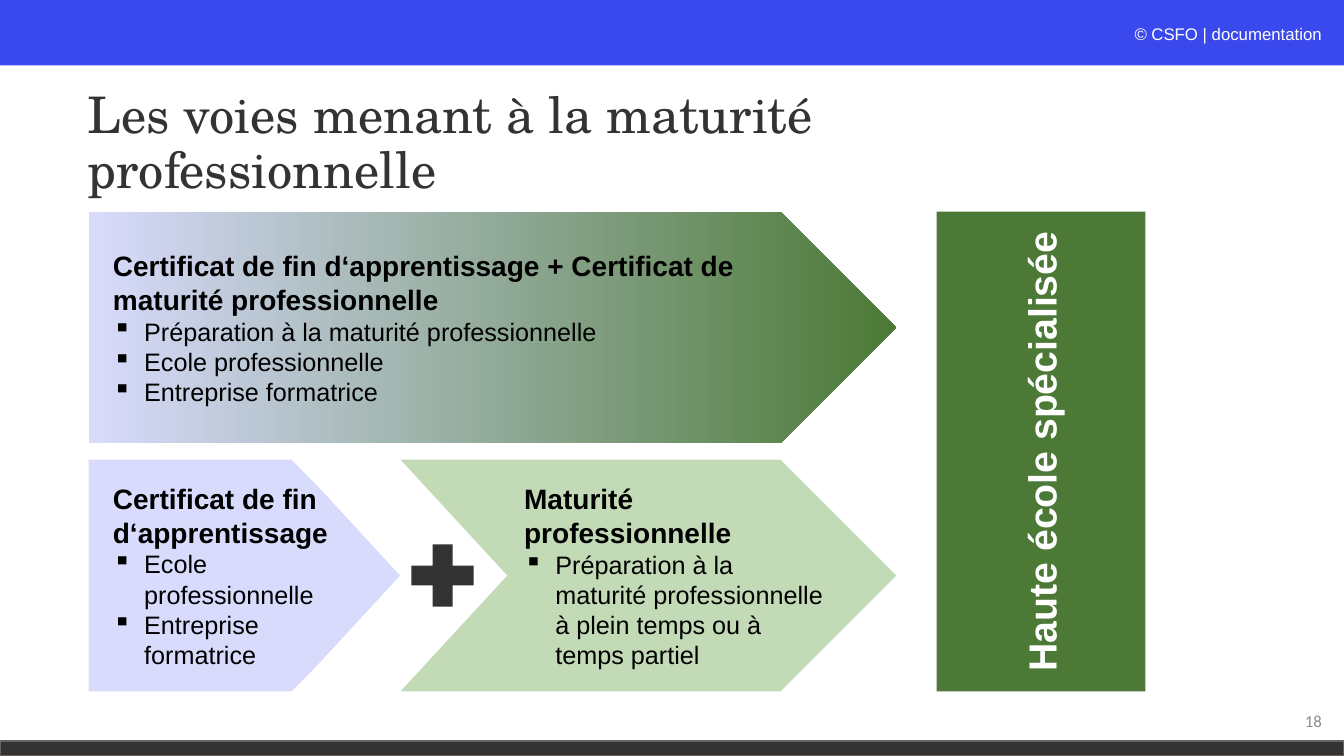
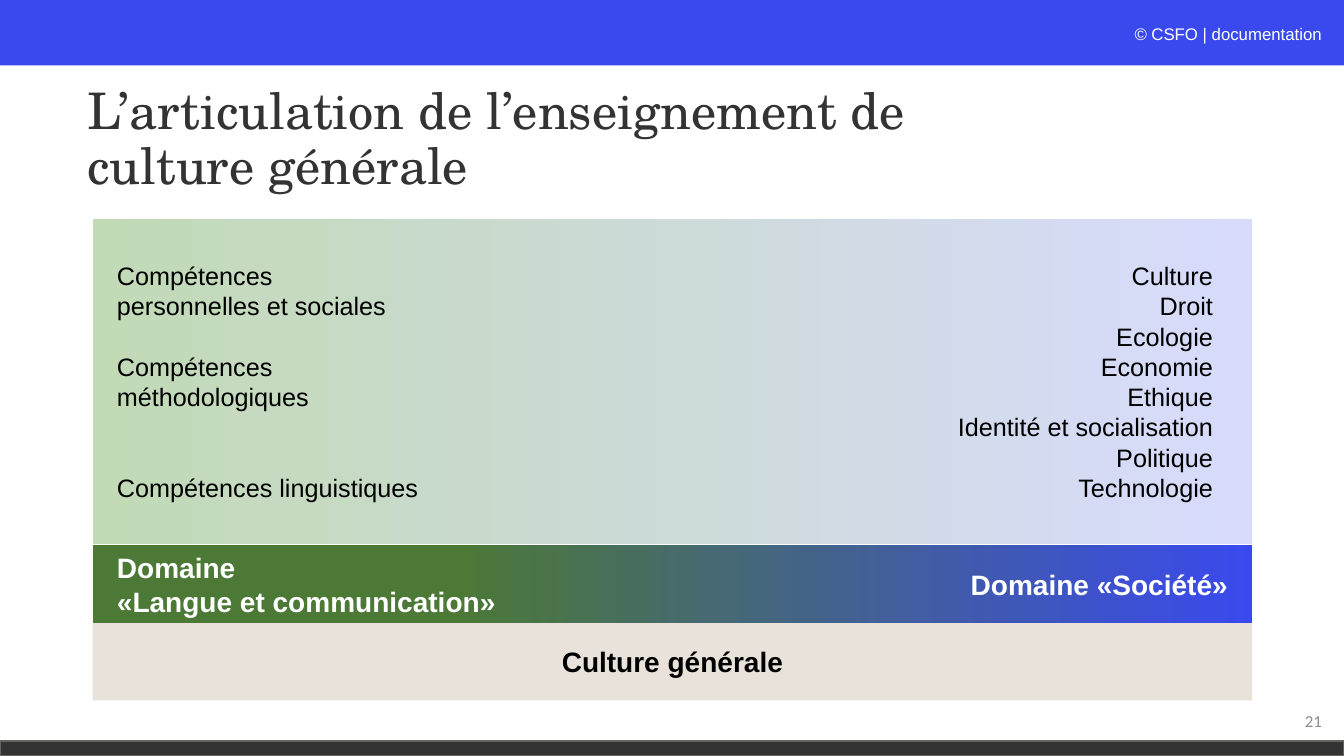
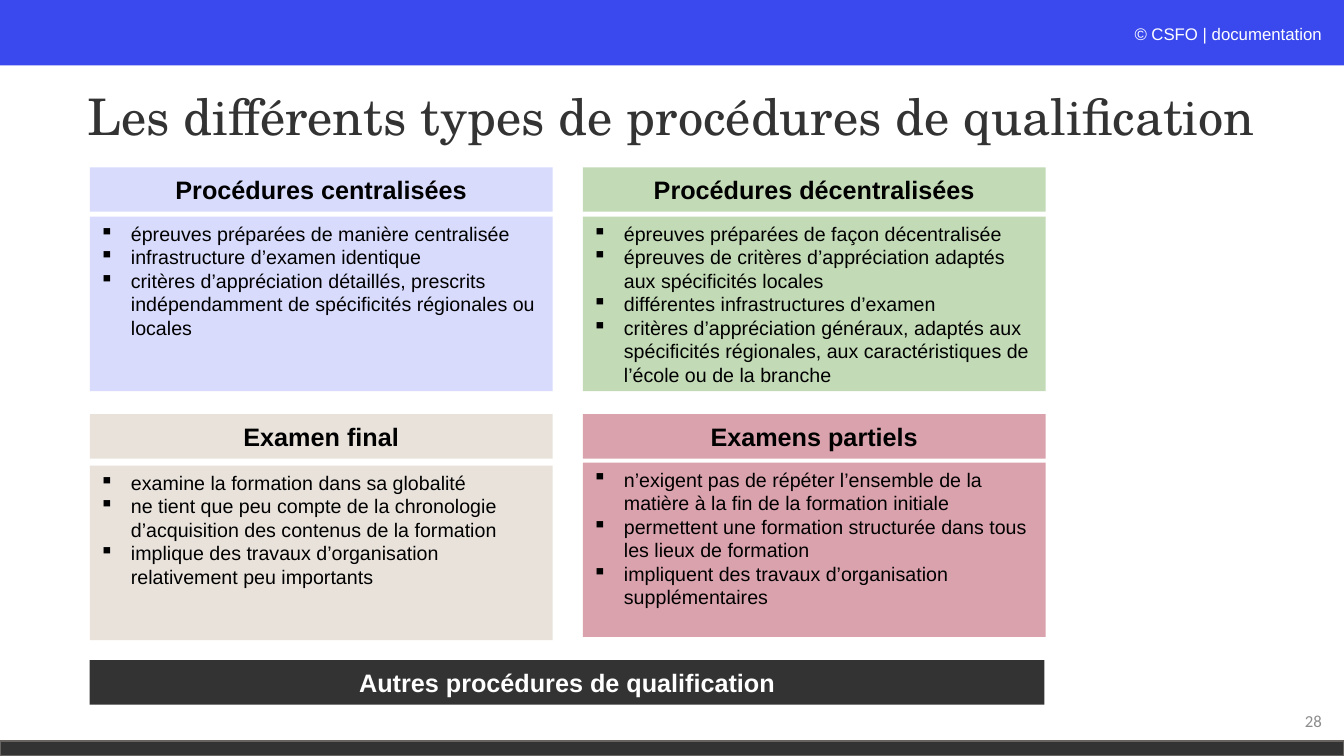
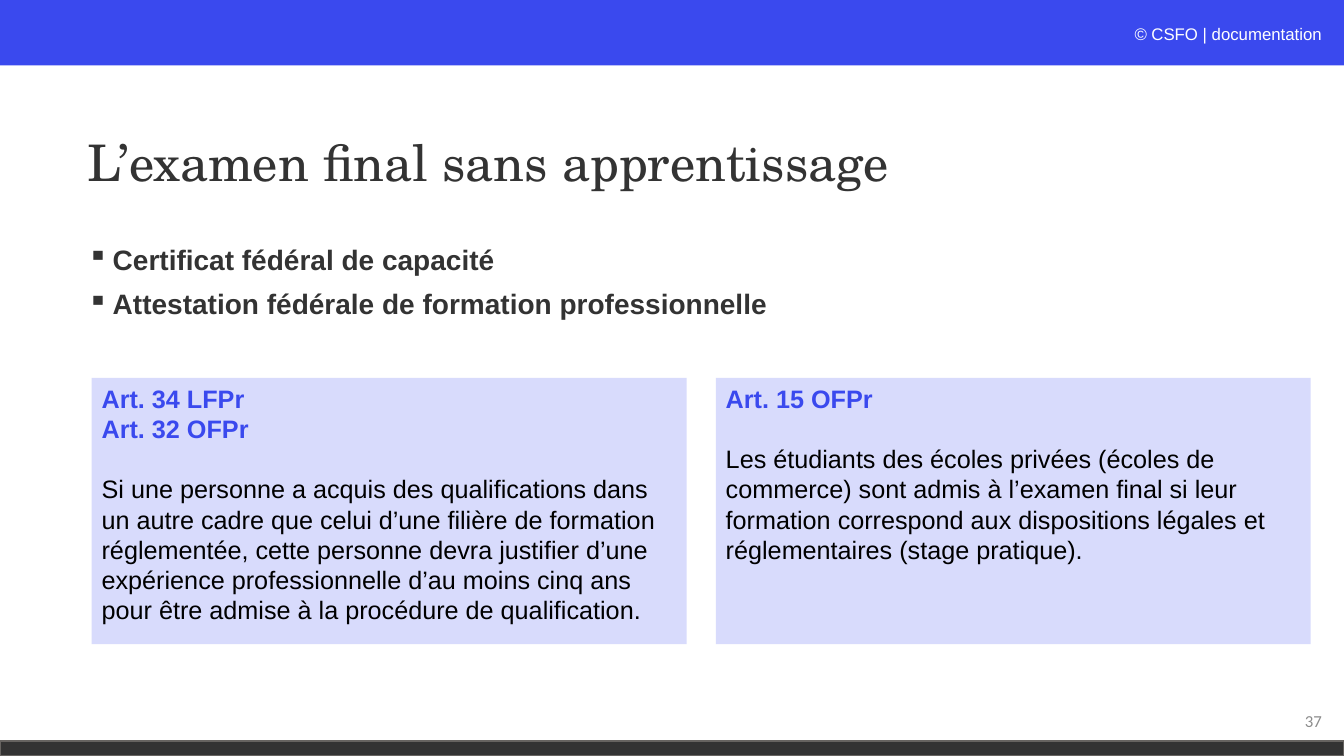
from pptx import Presentation
from pptx.dml.color import RGBColor
from pptx.enum.shapes import MSO_SHAPE
from pptx.enum.text import MSO_ANCHOR, PP_ALIGN
from pptx.oxml.ns import qn
from pptx.util import Inches, Pt
from lxml import etree

RECT, PLUS = MSO_SHAPE.RECTANGLE, MSO_SHAPE.MATH_PLUS
ARROW, NOTCH = MSO_SHAPE.PENTAGON, MSO_SHAPE.CHEVRON
TOP, MID = MSO_ANCHOR.TOP, MSO_ANCHOR.MIDDLE
LEFT, MIDDLE, RIGHT = PP_ALIGN.LEFT, PP_ALIGN.CENTER, PP_ALIGN.RIGHT

COLORS = {
    "blue": "3A49EE", "lilac": "D8DBFC", "green": "4C7936", "mint": "C2DAB6",
    "sand": "E8E2DB", "rose": "DAA2AD", "dark": "333333", "edge": "666360",
    "gray": "8C8C8C", "black": "000000", "white": "FFFFFF",
}
RGB = {name: RGBColor.from_string(code) for name, code in COLORS.items()}

# Paragraph styles: size, colour, bold, alignment, bullet indent
STYLES = {
    "title": (36, "dark", False, LEFT, 0),
    "page": (12, "gray", False, RIGHT, 0),
    "credit": (12, "white", False, RIGHT, 0),
    "head": (20, "black", True, LEFT, 0),
    "item": (18, "black", False, LEFT, 0.31),
    "text": (18, "black", False, LEFT, 0),
    "topic": (18, "black", False, RIGHT, 0),
    "side": (28, "white", True, MIDDLE, 0),
    "base": (20, "black", True, MIDDLE, 0),
    "field": (20, "white", True, LEFT, 0),
    "field end": (20, "white", True, RIGHT, 0),
    "card": (18, "black", True, MIDDLE, 0),
    "bar": (18, "white", True, MIDDLE, 0),
    "point": (14, "black", False, LEFT, 0.31),
    "lead": (20, "dark", True, LEFT, 0.25),
    "law": (18, "blue", True, LEFT, 0),
}
FACES = {"title": "TeX Gyre Schola", "page": "Calibri"}
TIGHT = ("title", "lead")
LINE = 21.6  # height of one line of 18 pt text, in points
WIDE = 0.24  # wide side inset


def box(slide, kind, at, fill=None):
    """Add a shape, or a text box if kind is None; two fills make a gradient."""
    at = [Inches(n) for n in at]
    if kind is None:
        return slide.shapes.add_textbox(*at)
    shape = slide.shapes.add_shape(kind, *at)
    shape.shadow.inherit = False
    shape.line.fill.background()
    if isinstance(fill, str):
        shape.fill.solid()
        shape.fill.fore_color.rgb = RGB[fill]
    else:
        shape.fill.gradient()
        shape.fill.gradient_angle = 0
        for stop, (place, name) in zip(shape.fill.gradient_stops, fill):
            stop.position = place
            stop.color.rgb = RGB[name]
    return shape


def write(shape, lines, anchor=MID, left=0.1, right=0.1):
    """Fill a shape with (style, text) or (style, text, space before) lines."""
    frame = shape.text_frame
    frame.word_wrap = True
    frame.vertical_anchor = anchor
    frame.margin_left, frame.margin_right = Inches(left), Inches(right)
    for i, (style, text, *gap) in enumerate(lines):
        size, color, bold, align, dent = STYLES[style]
        para = frame.paragraphs[0] if i == 0 else frame.add_paragraph()
        para.text = text
        para.alignment = align
        if dent:
            props = para._p.get_or_add_pPr()
            props.set("marL", str(Inches(dent)))
            props.set("indent", str(-Inches(dent)))
            etree.SubElement(props, qn("a:buChar")).set("char", "▪")
        if style in TIGHT:
            para.line_spacing = 0.9
        if gap:
            para.space_before = Pt(gap[0])
        font = para.font
        font.name, font.size = FACES.get(style, "Arial"), Pt(size)
        font.bold, font.color.rgb = bold, RGB[color]
    return frame


deck = Presentation()
deck.slide_width, deck.slide_height = Inches(13.33), Inches(7.5)

# Shared frame: bands, credit, page number, title
pages = [
    (18, "Les voies menant à la maturité professionnelle", 0.71, 8.82),
    (21, "L’articulation de l’enseignement de culture générale", 0.67, 8.82),
    (28, "Les différents types de procédures de qualification", 0.46, 12.44),
    (37, "L’examen final sans apprentissage", 0.91, 11.5),
]
slides = []
for num, title, top, width in pages:
    slide = deck.slides.add_slide(deck.slide_layouts[6])
    box(slide, RECT, (0, 0, 13.33, 0.65), "blue")
    foot = box(slide, RECT, (0, 7.35, 13.33, 0.15), "dark")
    foot.line.color.rgb, foot.line.width = RGB["edge"], Pt(1)
    credit = write(box(slide, None, (8.62, 0.19, 4.59, 0.3)), [("credit", "© ")], TOP)
    credit.paragraphs[0].runs[0].font.italic = True
    credit.paragraphs[0].add_run().text = "CSFO | documentation"
    write(box(slide, None, (10.21, 6.95, 3, 0.4)), [("page", str(num))])
    write(box(slide, None, (0.77, top, width, 1.45)), [("title", title)])
    slides.append(slide)
paths, culture, exams, final = slides

# Paths: integrated route
route = box(paths, ARROW, (0.88, 2.1, 8.01, 2.3), [(0, "lilac"), (1, "green")])
write(route, [
    ("head", "Certificat de fin d‘apprentissage + Certificat de maturité professionnelle"),
    ("item", "Préparation à la maturité professionnelle"),
    ("item", "Ecole professionnelle"),
    ("item", "Entreprise formatrice"),
], left=WIDE)

# Paths: route in two steps
first = box(paths, ARROW, (0.88, 4.56, 3.16, 2.3), "lilac")
write(first, [
    ("head", "Certificat de fin d‘apprentissage"),
    ("item", "Ecole professionnelle"),
    ("item", "Entreprise formatrice"),
], left=WIDE)
box(paths, ARROW, (3.97, 4.56, 4.92, 2.3), "mint")
box(paths, NOTCH, (2.91, 4.56, 2.12, 2.3), "white")
write(box(paths, None, (5.1, 4.73, 3.21, 2.29)), [
    ("head", "Maturité professionnelle"),
    ("item", "Préparation à la maturité professionnelle à plein temps ou à temps partiel"),
], TOP)
box(paths, PLUS, (3.97, 5.29, 0.84, 0.84), "dark")

# Paths: destination
school = box(paths, RECT, (9.29, 2.1, 2.07, 4.76), "green")
frame = write(school, [("side", "Haute école spécialisée")])
frame._txBody.bodyPr.set("vert", "vert270")

# Culture: base, domains, contents
base = box(culture, RECT, (0.92, 6.18, 11.5, 0.77), "sand")
write(base, [("base", "Culture générale")])
field = box(culture, RECT, (0.92, 5.41, 11.5, 0.77), [(0.31, "green"), (1, "blue")])
write(field, [("field", "Domaine"), ("field", "«Langue et communication»")], left=WIDE)
write(box(culture, None, (7.89, 5.41, 4.53, 0.77)),
      [("field end", "Domaine «Société»")], right=WIDE)
skills = box(culture, RECT, (0.92, 2.17, 11.5, 3.23), [(0, "mint"), (1, "lilac")])
write(skills, [
    ("text", "Compétences"),
    ("text", "personnelles et sociales"),
    ("text", "Compétences", LINE),
    ("text", "méthodologiques"),
    ("text", "Compétences linguistiques", 2 * LINE),
], left=WIDE)
topics = ["Culture", "Droit", "Ecologie", "Economie", "Ethique",
          "Identité et socialisation", "Politique", "Technologie"]
write(box(culture, None, (7.74, 2.17, 4.53, 3.23)),
      [("topic", topic) for topic in topics], right=WIDE)

# Exams: two by two cards (fill, top of the body, heading, points)
cards = [
    ("lilac", 2.15, "Procédures centralisées", [
        "épreuves préparées de manière centralisée",
        "infrastructure d’examen identique",
        "critères d’appréciation détaillés, prescrits indépendamment de "
        "spécificités régionales ou locales"]),
    ("mint", 2.15, "Procédures décentralisées", [
        "épreuves préparées de façon décentralisée",
        "épreuves de critères d’appréciation adaptés aux spécificités locales",
        "différentes infrastructures d’examen",
        "critères d’appréciation généraux, adaptés aux spécificités régionales, "
        "aux caractéristiques de l’école ou de la branche"]),
    ("sand", 4.62, "Examen final", [
        "examine la formation dans sa globalité",
        "ne tient que peu compte de la chronologie d’acquisition des contenus "
        "de la formation",
        "implique des travaux d’organisation relativement peu importants"]),
    ("rose", 4.59, "Examens partiels", [
        "n’exigent pas de répéter l’ensemble de la matière à la fin de la "
        "formation initiale",
        "permettent une formation structurée dans tous les lieux de formation",
        "impliquent des travaux d’organisation supplémentaires"]),
]
for i, (fill, top, head, points) in enumerate(cards):
    row, col = divmod(i, 2)
    x = 0.89 + 4.89 * col
    write(box(exams, RECT, (x, 1.66 + 2.45 * row, 4.59, 0.44), fill), [("card", head)])
    write(box(exams, RECT, (x, top, 4.59, 1.73), fill),
          [("point", point) for point in points], TOP)
write(box(exams, RECT, (0.89, 6.55, 9.47, 0.44), "dark"),
      [("bar", "Autres procédures de qualification")])

# Final: titles awarded and legal bases
write(box(final, None, (0.77, 2.39, 11.5, 4.44)), [
    ("lead", "Certificat fédéral de capacité"),
    ("lead", "Attestation fédérale de formation professionnelle", 10),
], TOP)
laws = [
    [("law", "Art. 34 LFPr"), ("law", "Art. 32 OFPr"),
     ("text", "Si une personne a acquis des qualifications dans un autre cadre que "
      "celui d’une filière de formation réglementée, cette personne devra justifier "
      "d’une expérience professionnelle d’au moins cinq ans pour être admise à la "
      "procédure de qualification.", LINE)],
    [("law", "Art. 15 OFPr"),
     ("text", "Les étudiants des écoles privées (écoles de commerce) sont admis à "
      "l’examen final si leur formation correspond aux dispositions légales et "
      "réglementaires (stage pratique).", LINE)],
]
for i, lines in enumerate(laws):
    write(box(final, RECT, (0.91 + 6.19 * i, 3.75, 5.9, 2.64), "lilac"), lines, TOP)

deck.save("out.pptx")
